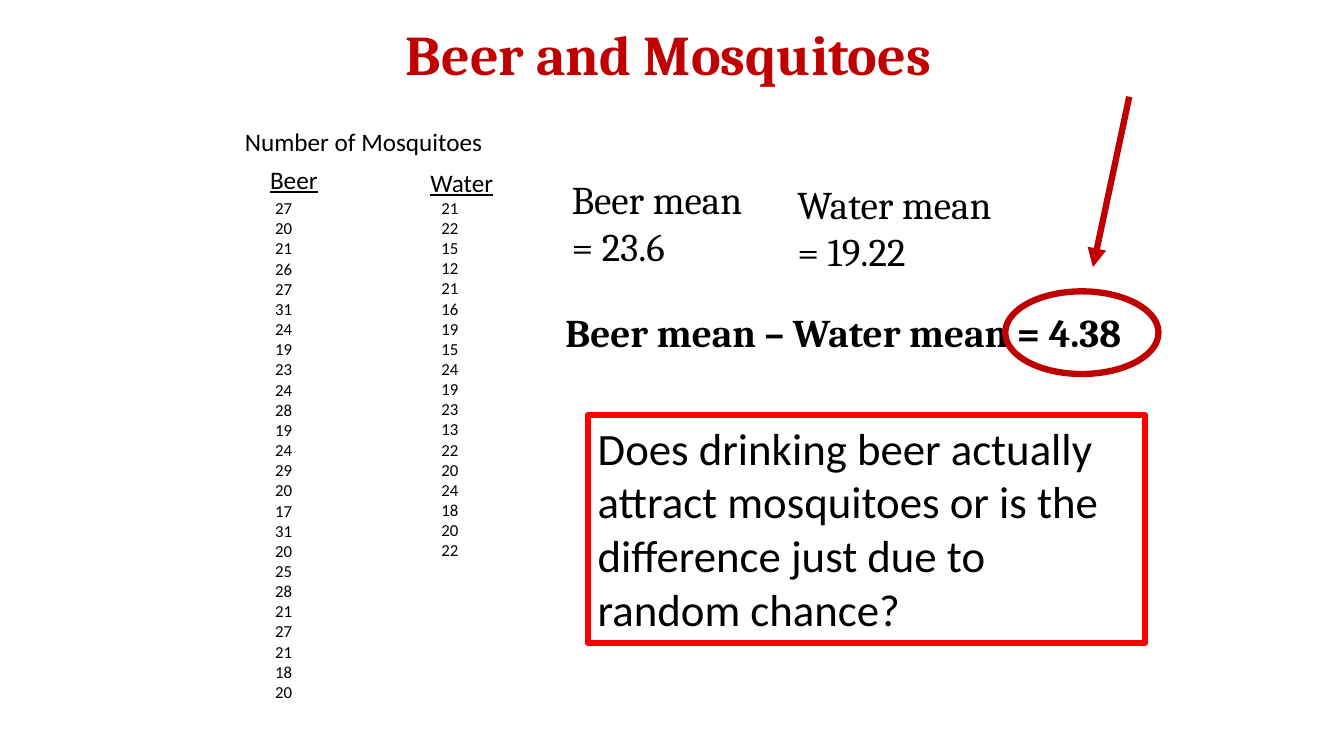
from lxml import etree
from pptx import Presentation
from pptx.dml.color import RGBColor
from pptx.enum.shapes import MSO_CONNECTOR, MSO_SHAPE
from pptx.enum.text import MSO_ANCHOR, PP_ALIGN
from pptx.oxml.ns import qn
from pptx.util import Inches, Pt

RECT, OVAL = MSO_SHAPE.RECTANGLE, MSO_SHAPE.OVAL
STRAIGHT = MSO_CONNECTOR.STRAIGHT
LEFT, CENTER = PP_ALIGN.LEFT, PP_ALIGN.CENTER
TOP = MSO_ANCHOR.TOP

COLORS = {"text": "000000", "accent": "C00000", "frame": "FF0000"}
LINE_WIDTH = Pt(4.5)

TITLE = "Beer and Mosquitoes"
TITLE_BOX = (2.17, 0.14, 8.92, 1.33)

# text, box, font, size, bold
LABELS = [
    ("Number of Mosquitoes", (2.33, 1.2, 3.07, 0.5), "Calibri", 18, False),
    ("Beer mean\n= 23.6", (5.57, 1.69, 2.18, 1.04), "Cambria", 28, False),
    ("Water mean\n= 19.22", (7.81, 1.74, 2.33, 1.04), "Cambria", 28, False),
    ("Beer mean – Water mean = 4.38", (5.51, 3.01, 6.12, 0.57), "Cambria", 28, True),
]

# heading, counts, box, heading indent, count indent, points below heading
COLUMNS = [
    ("Beer",
     [27, 20, 21, 26, 27, 31, 24, 19, 23, 24, 28, 19, 24,
      29, 20, 17, 31, 20, 25, 28, 21, 27, 21, 18, 20],
     (2.41, 1.58, 1.18, 5.59), 0.17, 0.22, 2.4),
    ("Water",
     [21, 22, 15, 12, 21, 16, 19, 15, 24, 19, 23, 13, 22, 20, 24, 18, 20, 22],
     (4.17, 1.61, 1, 4.04), 0, 0.11, 0),
]

QUESTION = ("Does drinking beer actually attract mosquitoes or is the "
            "difference just due to random chance?")
QUESTION_BOX = (5.83, 4.12, 5.53, 2.26)
RESULT_RING = (9.97, 2.89, 1.52, 0.82)
ARROW = (11.2, 0.96, 10.84, 2.65)


def inches(values):
    return [Inches(v) for v in values]


def rgb(name):
    return RGBColor.from_string(COLORS[name])


def style(p, font, size, bold=False, color="text", align=LEFT):
    p.alignment = align
    for r in p.runs:
        r.font.name, r.font.size, r.font.bold = font, Pt(size), bold
        r.font.color.rgb = rgb(color)


def fill_text(shape, text, *look):
    tf = shape.text_frame
    tf.word_wrap = True
    tf.vertical_anchor = TOP
    tf.text = text
    for p in tf.paragraphs:
        style(p, *look)
    return tf


def add_text(s, text, box, *look):
    return fill_text(s.shapes.add_textbox(*inches(box)), text, *look)


def add_outline(s, kind, box, color):
    sp = s.shapes.add_shape(kind, *inches(box))
    sp.shadow.inherit = False
    sp.fill.background()
    sp.line.color.rgb = rgb(color)
    sp.line.width = LINE_WIDTH
    return sp


def add_column(s, heading, counts, box, heading_indent, count_indent, gap):
    lines = [heading] + [str(n) for n in counts]
    tf = add_text(s, "\n".join(lines), box, "Calibri", 12)
    for p in tf.paragraphs:
        p._p.get_or_add_pPr().set("marL", str(Inches(count_indent)))
    head, first_count = tf.paragraphs[:2]
    head._p.get_or_add_pPr().set("marL", str(Inches(heading_indent)))
    head.runs[0].font.size = Pt(18)
    head.runs[0].font.underline = True
    first_count.space_before = Pt(gap)


def add_arrow(s, ends, color):
    arrow = s.shapes.add_connector(STRAIGHT, *inches(ends))
    arrow.line.color.rgb = rgb(color)
    arrow.line.width = LINE_WIDTH
    etree.SubElement(arrow.line._get_or_add_ln(), qn("a:tailEnd"), type="triangle")
    etree.SubElement(arrow._element.spPr, qn("a:effectLst"))


def main():
    prs = Presentation()
    prs.slide_width, prs.slide_height = inches((13.33, 7.5))
    s = prs.slides.add_slide(prs.slide_layouts[6])

    add_text(s, TITLE, TITLE_BOX, "Cambria", 40, True, "accent", CENTER)
    for label in LABELS:
        add_text(s, *label)
    for column in COLUMNS:
        add_column(s, *column)

    question = add_outline(s, RECT, QUESTION_BOX, "frame")
    fill_text(question, QUESTION, "Calibri", 32)
    add_arrow(s, ARROW, "accent")
    add_outline(s, OVAL, RESULT_RING, "accent")
    prs.save("out.pptx")


if __name__ == "__main__":
    main()
